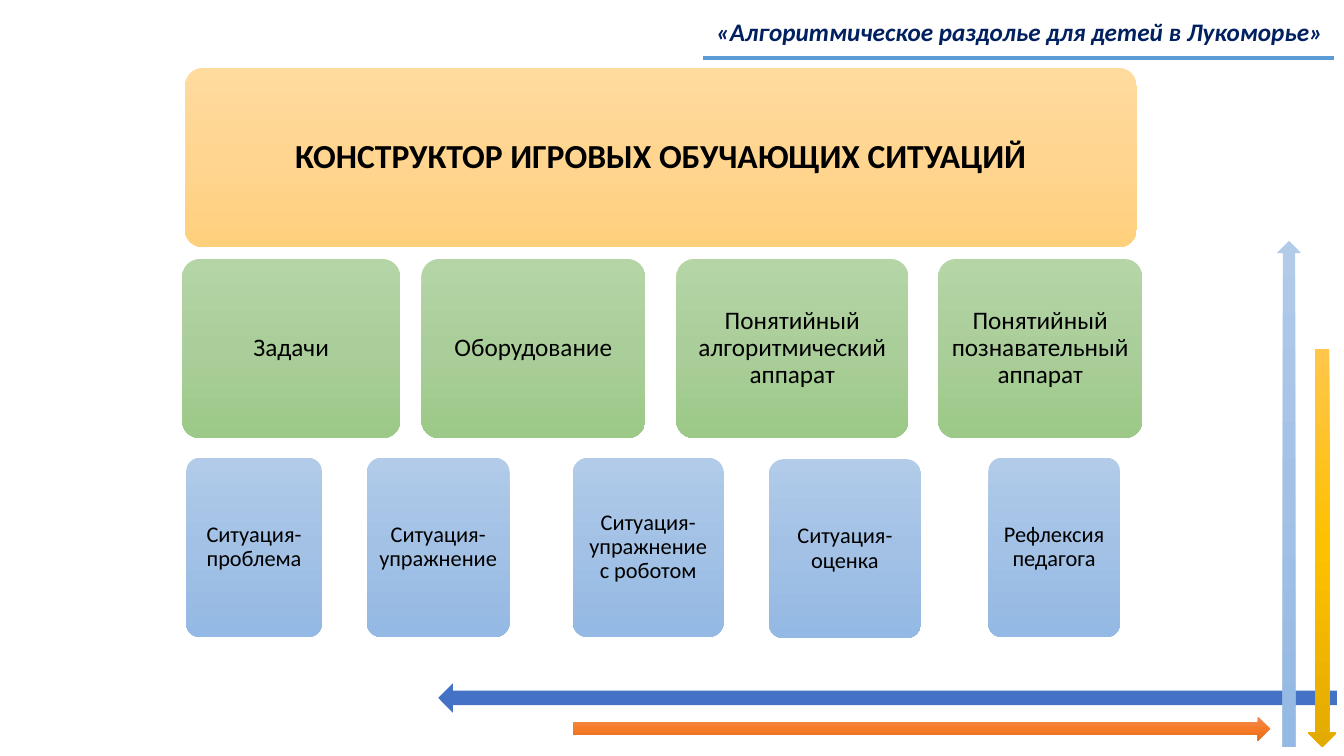
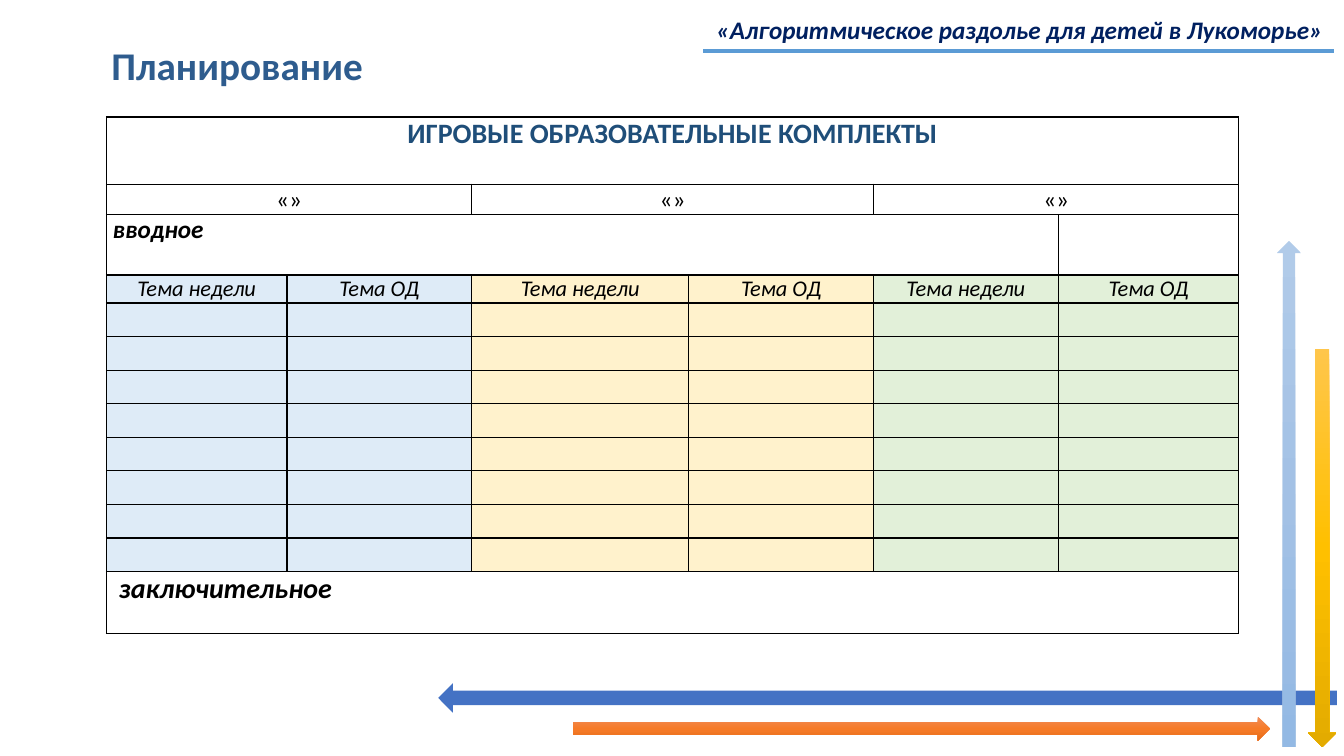
import copy

import lxml.etree
import pptx
import pptx.dml.color
import pptx.enum.shapes
import pptx.enum.text
import pptx.oxml.ns
import pptx.util

Pt = pptx.util.Pt
SHAPE = pptx.enum.shapes.MSO_SHAPE
ALIGN = pptx.enum.text.PP_ALIGN
ANCHOR = pptx.enum.text.MSO_ANCHOR
qn = pptx.oxml.ns.qn

FONT = "Calibri"
COLORS = {
    "black": "000000", "white": "FFFFFF", "navy": "002060",
    "rule": "5B9BD5", "arrow": "4472C4", "title": "2E5C8E",
    "head": "1F4E79", "ice": "DEEBF7", "cream": "FFF2CC", "mint": "E2F0D9",
}
# Top, middle and bottom colours of each gradient
GRADES = {
    "blue": ("B1CBE9", "A3C1E5", "93B9E4"),
    "gold": ("FFC64B", "FFC000", "E3AB00"),
    "orange": ("F18C57", "F67B28", "E56C19"),
    "peach": ("FFDB9E", "FFD590", "FFD07C"),
    "green": ("B5D5A7", "AACE9A", "9CC987"),
}
ARROWS = [
    (SHAPE.LEFT_ARROW, (313, 488, 642, 21), "arrow"),
    (SHAPE.UP_ARROW, (912, 172, 17.5, 361.5), "blue"),
    (SHAPE.DOWN_ARROW, (934.5, 249, 20, 284.5), "gold"),
    (SHAPE.RIGHT_ARROW, (409, 512, 498, 17), "orange"),
]
BANNER = (132, 48.5, 680, 128)
# Left, top, width, text
PARTS = [
    (130, 185, 156, "Задачи"),
    (301, 185, 160, "Оборудование"),
    (483, 185, 166, "Понятийный алгоритмический аппарат"),
    (670, 185, 146, "Понятийный познавательный аппарат"),
]
CASES = [
    (133, 327, 97, "Ситуация-проблема"),
    (262, 327, 102, "Ситуация-упражнение"),
    (409, 327, 108, "Ситуация-упражнение с роботом"),
    (549, 328, 109, "Ситуация-оценка"),
    (706, 327, 94, "Рефлексия педагога"),
]
COLS = (129, 132, 155, 132, 132, 129)
ROWS = (48, 22, 43, 20) + (24,) * 8 + (44,)
TINTS = ("ice", "ice", "cream", "cream", "mint", "mint")


def rgb(name):
    return pptx.dml.color.RGBColor.from_string(COLORS[name])


def box(left, top, width, height):
    return Pt(left), Pt(top), Pt(width), Pt(height)


def write(frame, text, size, color="black", bold=False, slant=False,
          align=ALIGN.CENTER, space=None):
    par = frame.paragraphs[0]
    par.alignment = align
    par.line_spacing = space
    run = par.add_run()
    run.text = text
    font = run.font
    font.name, font.size = FONT, Pt(size)
    font.bold, font.italic = bold, slant
    font.color.rgb = rgb(color)


def inset(item, side, edge):
    item.margin_left = item.margin_right = Pt(side)
    item.margin_top = item.margin_bottom = Pt(edge)


def paint(shape, name):
    shape.shadow.inherit = False
    shape.line.fill.background()
    fill = shape.fill
    if name in COLORS:
        fill.solid()
        fill.fore_color.rgb = rgb(name)
        return
    fill.gradient()
    fill.gradient_angle = 270
    stops = shape.element.spPr.find(".//" + qn("a:gsLst"))
    stops.insert(1, copy.deepcopy(stops[1]))
    for stop, place, tone in zip(fill.gradient_stops, (0, 0.5, 1), GRADES[name]):
        stop.position = place
        stop.color.rgb = pptx.dml.color.RGBColor.from_string(tone)


def panel(slide, place, grade):
    shape = slide.shapes.add_shape(SHAPE.ROUNDED_RECTANGLE, *box(*place))
    shape.adjustments[0] = 0.1
    paint(shape, grade)
    return shape


def label(slide, place, grade, text, size):
    frame = panel(slide, place, grade).text_frame
    frame.word_wrap = True
    frame.vertical_anchor = ANCHOR.MIDDLE
    inset(frame, 5, 5)
    write(frame, text, size, space=0.9)


def title(slide, place, text, size, anchor, **style):
    shape = slide.shapes.title
    shape.left, shape.top, shape.width, shape.height = box(*place)
    frame = shape.text_frame
    frame.auto_size = pptx.enum.text.MSO_AUTO_SIZE.NONE
    frame.word_wrap = True
    frame.vertical_anchor = anchor
    inset(frame, 3.6, 3.6)
    write(frame, text, size, bold=True, **style)
    # Bring the title in front of the shapes
    shape.element.getparent().append(shape.element)


def start(deck, top, level):
    """Add a slide with the arrows, the motto and its rule."""
    slide = deck.slides.add_slide(deck.slide_layouts[5])
    for kind, place, color in ARROWS:
        paint(slide.shapes.add_shape(kind, *box(*place)), color)
    rule = slide.shapes.add_connector(
        pptx.enum.shapes.MSO_CONNECTOR.STRAIGHT,
        Pt(502.5), Pt(level), Pt(953), Pt(level))
    rule.line.color.rgb = rgb("rule")
    rule.line.width = Pt(3)
    lxml.etree.SubElement(rule.element.spPr, qn("a:effectLst"))
    motto = slide.shapes.add_textbox(*box(502, top, 453, 38)).text_frame
    motto.word_wrap = False
    write(motto, "«Алгоритмическое раздолье для детей в Лукоморье»", 18,
          "navy", bold=True, slant=True, space=Pt(33.6))
    return slide


def edge(grid):
    """Give every cell a thin black border."""
    for props in grid.element.iter(qn("a:tcPr")):
        for at, side in enumerate(("lnL", "lnR", "lnT", "lnB")):
            line = lxml.etree.Element(qn("a:" + side), w=str(Pt(1)))
            fill = lxml.etree.SubElement(line, qn("a:solidFill"))
            lxml.etree.SubElement(fill, qn("a:srgbClr"), val=COLORS["black"])
            props.insert(at, line)


def plan(slide):
    grid = slide.shapes.add_table(
        len(ROWS), len(COLS), *box(76, 83.5, sum(COLS), sum(ROWS)))
    table = grid.table
    table.first_row = table.horz_banding = False
    for col, width in zip(table.columns, COLS):
        col.width = Pt(width)
    last = len(ROWS) - 1
    for at, (row, height) in enumerate(zip(table.rows, ROWS)):
        row.height = Pt(height)
        for cell, tint in zip(row.cells, TINTS):
            inset(cell, 4.5, 0)
            cell.fill.solid()
            cell.fill.fore_color.rgb = rgb(tint if 3 <= at < last else "white")
    edge(grid)

    # Wide cells: row, first and last column
    spans = [(0, 0, 5), (1, 0, 1), (1, 2, 3), (1, 4, 5), (2, 0, 4), (last, 0, 5)]
    for row, first, end in spans:
        table.cell(row, first).merge(table.cell(row, end))

    # Texts
    write(table.cell(0, 0).text_frame, "ИГРОВЫЕ ОБРАЗОВАТЕЛЬНЫЕ КОМПЛЕКТЫ",
          20, "head", bold=True)
    for col in (0, 2, 4):
        write(table.cell(1, col).text_frame, "«»", 18)
    for col in range(len(COLS)):
        text = "Тема ОД" if col % 2 else "Тема недели"
        write(table.cell(3, col).text_frame, text, 16, slant=True)
    for row, text, size in ((2, "вводное", 18), (last, "заключительное", 20)):
        write(table.cell(row, 0).text_frame, text, size, bold=True,
              slant=True, align=ALIGN.LEFT)
    table.cell(last, 0).margin_left = Pt(9)


def main():
    deck = pptx.Presentation()
    deck.slide_width, deck.slide_height = Pt(960), Pt(540)

    # Builder of play situations
    slide = start(deck, -3.6, 41.4)
    panel(slide, BANNER, "peach")
    for group, grade, size in ((PARTS, "green", 18), (CASES, "blue", 16)):
        for left, top, width, text in group:
            label(slide, (left, top, width, 128), grade, text, size)
    title(slide, BANNER, "КОНСТРУКТОР ИГРОВЫХ ОБУЧАЮЩИХ СИТУАЦИЙ", 24,
          ANCHOR.MIDDLE, space=0.9)

    # Planning table
    slide = start(deck, -5, 36.4)
    plan(slide)
    title(slide, (76, 26, 420, 41), "Планирование", 28, ANCHOR.TOP,
          color="title", align=ALIGN.LEFT)

    deck.save("out.pptx")


if __name__ == "__main__":
    main()
